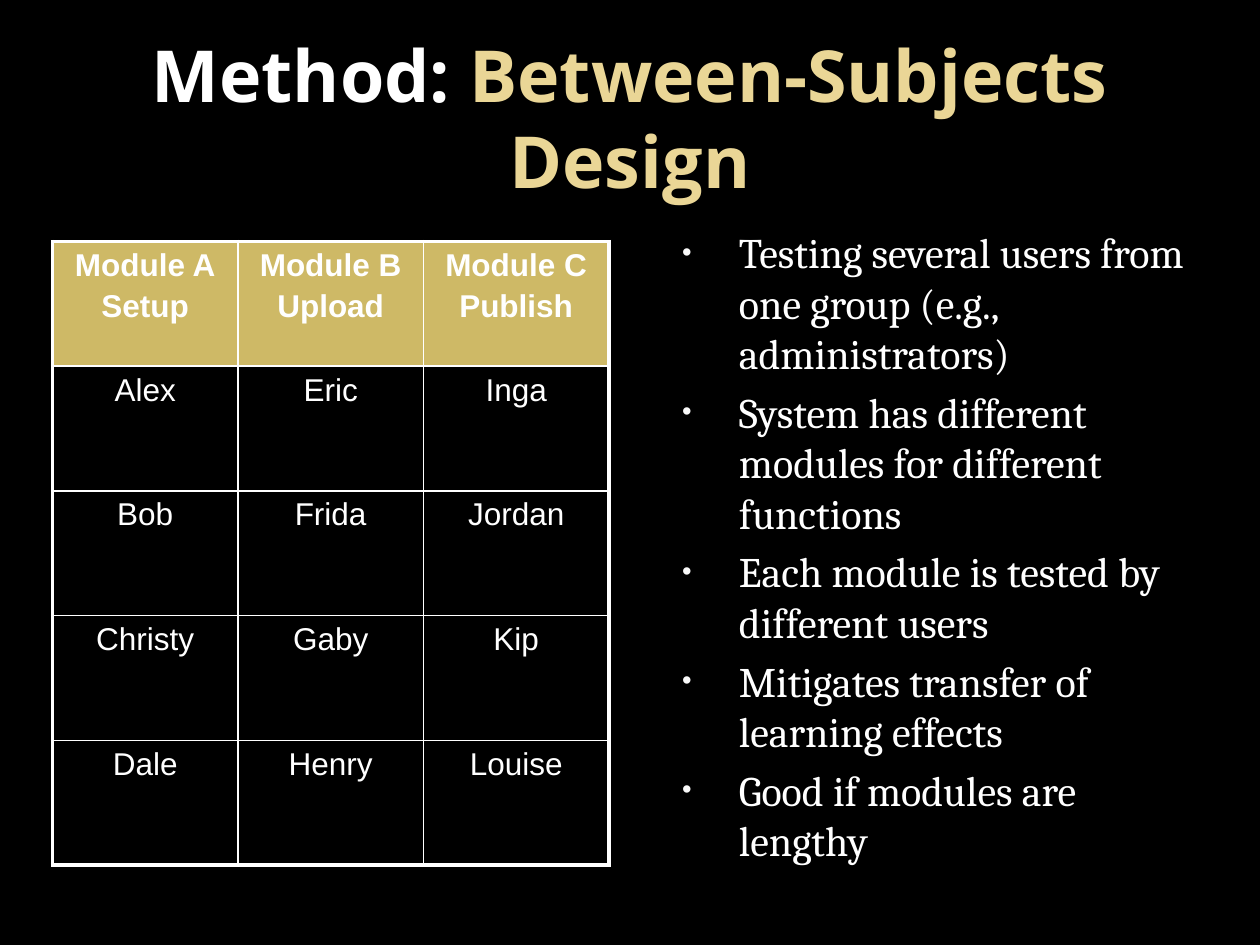
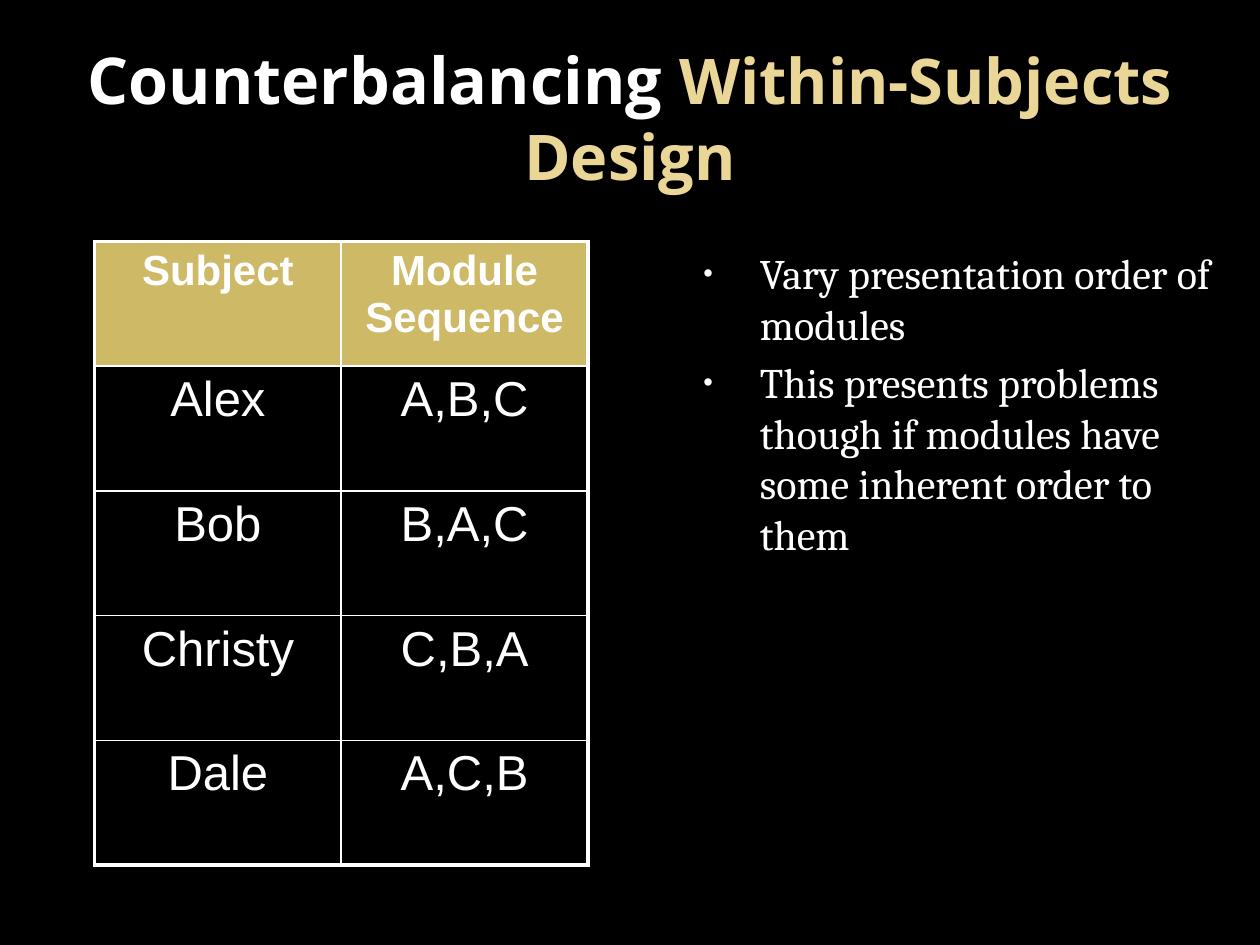
from lxml import etree
from pptx import Presentation
from pptx.dml.color import RGBColor
from pptx.enum import text
from pptx.oxml import ns
from pptx.util import Emu, Inches, Pt

BLACK = RGBColor(0x00, 0x00, 0x00)
WHITE = RGBColor(0xFF, 0xFF, 0xFF)
BULLET_GREY = RGBColor(0xF9, 0xF9, 0xF9)
GOLD = RGBColor(0xCE, 0xB9, 0x66)
PALE_GOLD = RGBColor(0xEA, 0xD6, 0x96)

SLIDE_WIDTH, SLIDE_HEIGHT = Inches(10), Inches(7.5)
GRID_COLUMNS, GRID_ROWS = 120, 90
TITLE_BOX = (6, 3.6, 108, 15)
CONTENT_TOP, CONTENT_HEIGHT = 23, 59.4
BODY_WIDTH = 53
TITLE_ONLY = 5

THIN, THICK = Pt(1), Pt(2.25)
PARAGRAPH_GAP = 0.2  # share of the text size


def place(shape, left, top, width, height):
    """Put a shape at a position given in grid columns and rows."""
    shape.left, shape.width = (Emu(round(SLIDE_WIDTH * n / GRID_COLUMNS)) for n in (left, width))
    shape.top, shape.height = (Emu(round(SLIDE_HEIGHT * n / GRID_ROWS)) for n in (top, height))


def add_run(paragraph, words, color=WHITE, **font_format):
    run = paragraph.add_run()
    run.text = words
    run.font.color.rgb = color
    for name, value in font_format.items():
        setattr(run.font, name, value)


def write_paragraphs(frame, lines, alignment, size, **font_format):
    """Write one paragraph per line, with a gap between paragraphs."""
    for index, line in enumerate(lines):
        paragraph = frame.add_paragraph() if index else frame.paragraphs[0]
        paragraph.alignment = alignment
        paragraph.space_before = Pt(size * PARAGRAPH_GAP if index else 0)
        add_run(paragraph, line, size=Pt(size), **font_format)


def add_child(parent, tag, **attributes):
    child = etree.SubElement(parent, ns.qn(tag))
    for name, value in attributes.items():
        child.set(name, str(value))
    return child


def add_bullet(paragraph):
    properties = paragraph._p.get_or_add_pPr()
    properties.set("marL", str(Inches(0.6)))
    properties.set("indent", str(Inches(-0.45)))
    color = add_child(properties, "a:buClr")
    add_child(color, "a:srgbClr", val=BULLET_GREY)
    add_child(properties, "a:buSzPct", val=65000)
    add_child(properties, "a:buFont", typeface="Arial")
    add_child(properties, "a:buChar", char="•")


def add_titled_slide(presentation, *title_parts):
    """Add a slide whose title is made of (words, colour, size) parts."""
    slide = presentation.slides.add_slide(presentation.slide_layouts[TITLE_ONLY])
    title = slide.shapes.title
    place(title, *TITLE_BOX)
    frame = title.text_frame
    frame.auto_size = text.MSO_AUTO_SIZE.NONE
    frame.vertical_anchor = text.MSO_ANCHOR.MIDDLE
    paragraph = frame.paragraphs[0]
    paragraph.alignment = text.PP_ALIGN.CENTER
    for words, color, size in title_parts:
        add_run(paragraph, words, color, name="Open Sans", size=Pt(size), bold=True)
    return slide


def add_bullet_list(slide, left, top, points):
    box = slide.shapes.add_textbox(0, 0, 0, 0)
    place(box, left, top, BODY_WIDTH, CONTENT_HEIGHT)
    frame = box.text_frame
    frame.word_wrap = True
    write_paragraphs(frame, points, text.PP_ALIGN.LEFT, 24, name="Cambria")
    for paragraph in frame.paragraphs:
        add_bullet(paragraph)


def draw_borders(cell, widths):
    """Draw the left, right, top and bottom lines of a cell."""
    properties = cell._tc.get_or_add_tcPr()
    for side, width in zip("LRTB", widths):
        line = add_child(properties, f"a:ln{side}", w=width)
        fill = add_child(line, "a:solidFill")
        add_child(fill, "a:srgbClr", val=WHITE)


def add_grid_table(slide, left, width, rows, header_size, body_size):
    """Add a table with a gold header and a thick frame; "\\n" splits paragraphs."""
    row_count, column_count = len(rows), len(rows[0])
    frame = slide.shapes.add_table(row_count, column_count, 0, 0, 0, 0)
    place(frame, left, CONTENT_TOP, width, CONTENT_HEIGHT)
    table = frame.table
    table.first_row = table.horz_banding = False
    # Resizing a column or row also resizes the frame, so divide first.
    column_width, row_height = frame.width // column_count, frame.height // row_count
    for column in table.columns:
        column.width = column_width
    for row in table.rows:
        row.height = row_height
    for r, row in enumerate(rows):
        for c, words in enumerate(row):
            cell = table.cell(r, c)
            on_edge = (c == 0, c == column_count - 1, r == 0, r == row_count - 1)
            draw_borders(cell, [THICK if edge else THIN for edge in on_edge])
            header = r == 0
            cell.fill.solid()
            cell.fill.fore_color.rgb = GOLD if header else BLACK
            write_paragraphs(cell.text_frame, words.split("\n"), text.PP_ALIGN.CENTER,
                             header_size if header else body_size,
                             name="Arial", bold=header)


def add_between_subjects(presentation):
    slide = add_titled_slide(presentation, ("Method: ", WHITE, 41),
                             ("Between-Subjects Design", PALE_GOLD, 41))
    add_bullet_list(slide, 62, 21, [
        "Testing several users from one group (e.g., administrators)",
        "System has different modules for different functions",
        "Each module is tested by different users",
        "Mitigates transfer of learning effects",
        "Good if modules are lengthy",
    ])
    add_grid_table(slide, 5, 53, [
        ("Module A\nSetup", "Module B\nUpload", "Module C\nPublish"),
        ("Alex", "Eric", "Inga"),
        ("Bob", "Frida", "Jordan"),
        ("Christy", "Gaby", "Kip"),
        ("Dale", "Henry", "Louise"),
    ], header_size=18, body_size=18)


def add_within_subjects(presentation):
    slide = add_titled_slide(presentation, ("Counterbalancing", WHITE, 36.9),
                             (" ", WHITE, 36), ("Within-Subjects Design", PALE_GOLD, 36))
    add_bullet_list(slide, 64, CONTENT_TOP, [
        "Vary presentation order of modules",
        "This presents problems though if modules have some inherent order to them",
    ])
    add_grid_table(slide, 9, 47, [
        ("Subject", "Module Sequence"),
        ("Alex", "A,B,C"),
        ("Bob", "B,A,C"),
        ("Christy", "C,B,A"),
        ("Dale", "A,C,B"),
    ], header_size=24, body_size=28)


def main():
    presentation = Presentation()
    presentation.slide_width, presentation.slide_height = SLIDE_WIDTH, SLIDE_HEIGHT
    background = presentation.slide_master.background.fill
    background.solid()
    background.fore_color.rgb = BLACK
    add_between_subjects(presentation)
    add_within_subjects(presentation)
    presentation.save("out.pptx")


if __name__ == "__main__":
    main()
